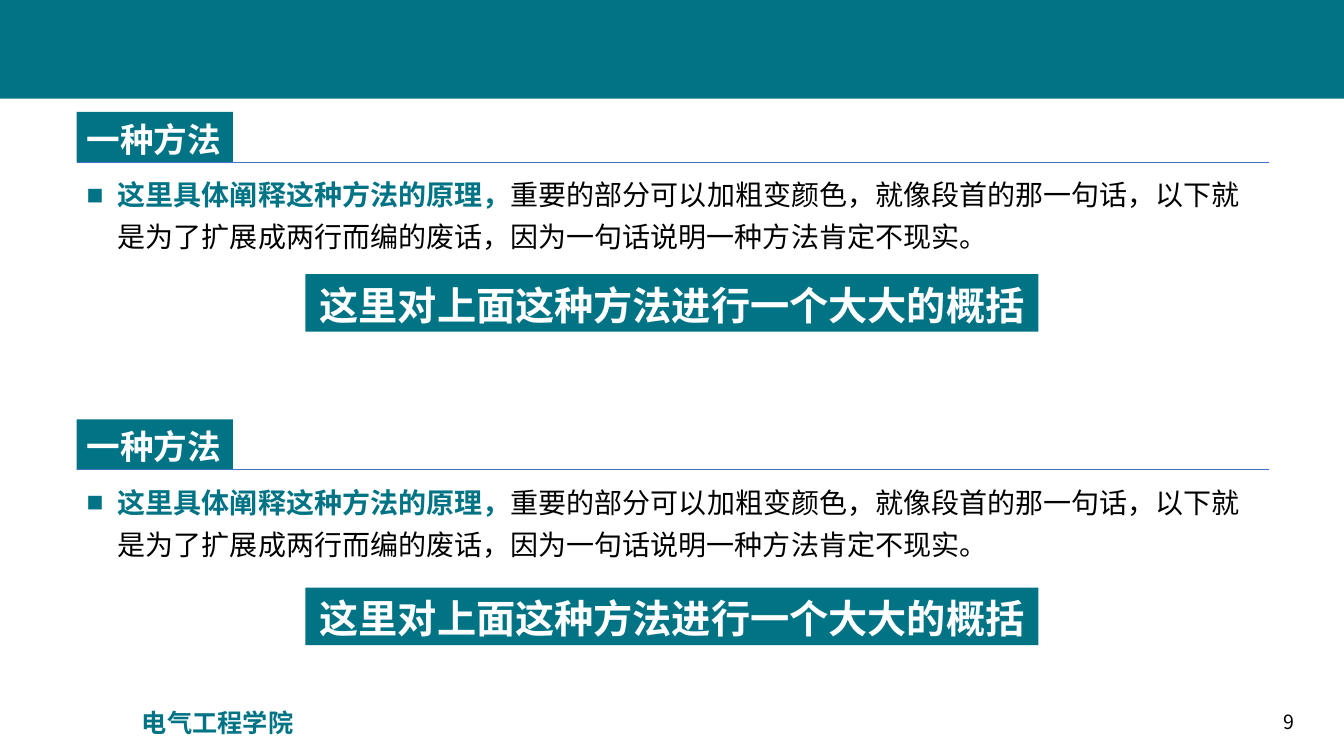
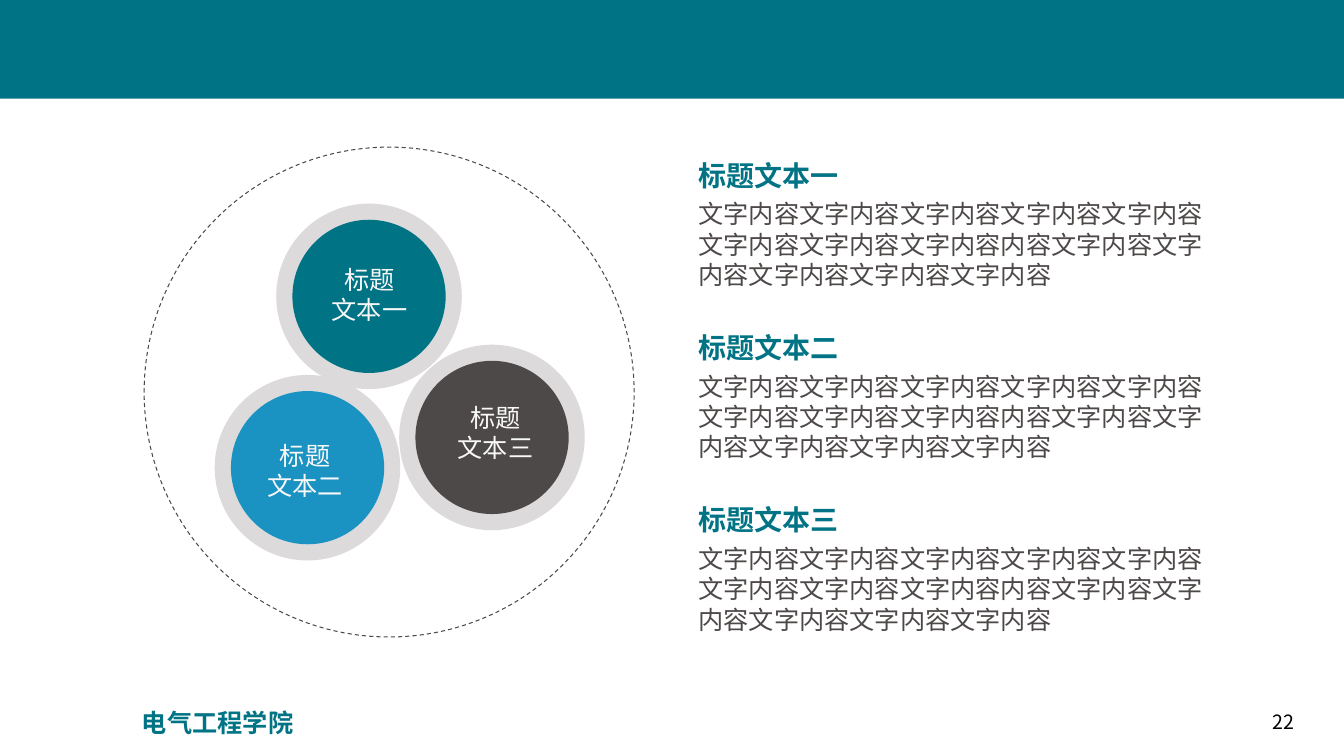
"""Build two teaching slides: method summaries and a three-circle diagram."""
from dataclasses import dataclass

import lxml.etree
import pptx
import pptx.dml.color
import pptx.enum.dml
import pptx.enum.shapes
import pptx.enum.text
import pptx.oxml.ns
import pptx.util

Inches = pptx.util.Inches
Pt = pptx.util.Pt
Align = pptx.enum.text.PP_ALIGN
Anchor = pptx.enum.text.MSO_ANCHOR
Preset = pptx.enum.shapes.MSO_SHAPE
qn = pptx.oxml.ns.qn

FONT = "Noto Sans CJK SC"
COLORS = {
    "teal": "007385",
    "blue": "1A92C2",
    "gray": "4D4948",
    "ring": "DCDADA",
    "rule": "4472C4",
    "white": "FFFFFF",
    "label": "F8F8F8",
    "black": "000000",
}
LEAD = "这里具体阐释这种方法的原理，"
DETAIL = (
    "重要的部分可以加粗变颜色，就像段首的那一句话，以下就是为了扩展成两行而编的废话，"
    "因为一句话说明一种方法肯定不现实。"
)
SUMMARY = "这里对上面这种方法进行一个大大的概括"
FILLER = "文字内容" * 8 + "内容" + "文字内容" * 5


@dataclass
class Box:
    left: float
    top: float
    width: float
    height: float

    def lengths(self) -> tuple:
        return tuple(Inches(v) for v in (self.left, self.top, self.width, self.height))


@dataclass
class Run:
    text: str
    color: str
    bold: bool = False


@dataclass
class Method:
    top: float
    summary_top: float


@dataclass
class Disc:
    center_x: float
    center_y: float
    color: str
    numeral: str
    label_left: float
    label_top: float


METHODS = [Method(1.11, 2.72), Method(4.16, 5.83)]
DISCS = [
    Disc(3.05, 4.64, "blue", "二", 2.52, 4.3),
    Disc(4.88, 4.34, "gray", "三", 4.41, 3.92),
    Disc(3.66, 2.94, "teal", "一", 3.16, 2.55),
]


def rgb(name: str) -> pptx.dml.color.RGBColor:
    return pptx.dml.color.RGBColor.from_string(COLORS[name])


def add_bullet(paragraph) -> None:
    properties = paragraph._p.get_or_add_pPr()
    properties.set("marL", str(Inches(0.31)))
    properties.set("indent", str(-Inches(0.31)))
    lxml.etree.SubElement(properties, qn("a:buFont"), typeface="Arial")
    lxml.etree.SubElement(properties, qn("a:buChar"), char="■")


def write(shape, paragraphs: list[list[Run]], size: float, align=Align.LEFT,
          anchor=Anchor.TOP, wrap: bool = True, spacing: float = 1.2,
          bullet: bool = False) -> None:
    frame = shape.text_frame
    frame.word_wrap = wrap
    frame.vertical_anchor = anchor
    frame.margin_top = Inches(0.07)
    for index, runs in enumerate(paragraphs):
        paragraph = frame.add_paragraph() if index else frame.paragraphs[0]
        if bullet:
            add_bullet(paragraph)
        paragraph.alignment = align
        paragraph.line_spacing = Pt(size * spacing)
        for part in runs:
            run = paragraph.add_run()
            run.text = part.text
            run.font.size = Pt(size)
            run.font.bold = part.bold
            run.font.name = FONT
            run.font.color.rgb = rgb(part.color)
            lxml.etree.SubElement(run._r.get_or_add_rPr(), qn("a:ea"), typeface=FONT)


def add_text(slide, box: Box, text: str, size: float, color: str,
             bold: bool = False, **layout) -> None:
    paragraphs = [[Run(line, color, bold)] for line in text.split("\n")]
    write(slide.shapes.add_textbox(*box.lengths()), paragraphs, size, **layout)


def add_filled(shapes, preset, box: Box, color: str):
    shape = shapes.add_shape(preset, *box.lengths())
    shape.shadow.inherit = False
    shape.fill.solid()
    shape.fill.fore_color.rgb = rgb(color)
    shape.line.fill.background()
    return shape


def add_circle(shapes, center_x: float, center_y: float, diameter: float, color: str):
    box = Box(center_x - diameter / 2, center_y - diameter / 2, diameter, diameter)
    return add_filled(shapes, Preset.OVAL, box, color)


def add_page(deck, number: int):
    slide = deck.slides.add_slide(deck.slide_layouts[6])
    add_filled(slide.shapes, Preset.RECTANGLE, Box(0, 0, 13.33, 0.98), "teal")
    add_text(slide, Box(9.94, 6.95, 3, 0.4), str(number), 14, "black",
             align=Align.RIGHT, anchor=Anchor.MIDDLE)
    add_text(slide, Box(1.31, 6.95, 1.72, 0.4), "电气工程学院", 18, "teal",
             bold=True, wrap=False)
    return slide


def add_method(slide, method: Method) -> None:
    left, rule_top = 0.76, method.top + 0.5
    heading = slide.shapes.add_group_shape().shapes
    tab = add_filled(heading, Preset.RECTANGLE, Box(left, method.top, 1.55, 0.5), "teal")
    write(tab, [[Run("一种方法", "white", True)]], 24, wrap=False)
    rule = heading.add_connector(
        pptx.enum.shapes.MSO_CONNECTOR.STRAIGHT,
        Inches(left), Inches(rule_top), Inches(12.59), Inches(rule_top))
    rule.line.color.rgb = rgb("rule")
    rule.line.width = Pt(0.5)
    lxml.etree.SubElement(rule._element.spPr, qn("a:effectLst"))

    principle = slide.shapes.add_textbox(*Box(left, rule_top, 11.81, 0.9).lengths())
    write(principle, [[Run(LEAD, "teal", True), Run(DETAIL, "black")]], 20,
          spacing=1.5, bullet=True)
    summary = add_filled(slide.shapes, Preset.RECTANGLE,
                         Box(3.03, method.summary_top, 7.27, 0.57), "teal")
    write(summary, [[Run(SUMMARY, "white", True)]], 28, align=Align.CENTER, wrap=False)


def add_diagram(slide) -> None:
    orbit = add_circle(slide.shapes, 3.86, 3.89, 4.86, "white")
    orbit.fill.background()
    orbit.line.color.rgb = rgb("gray")
    orbit.line.width = Pt(0.75)
    orbit.line.dash_style = pptx.enum.dml.MSO_LINE.DASH
    for disc in DISCS:
        add_circle(slide.shapes, disc.center_x, disc.center_y, 1.84, "ring")
        add_circle(slide.shapes, disc.center_x, disc.center_y, 1.52, disc.color)
    for disc in DISCS:
        add_text(slide, Box(disc.label_left, disc.label_top, 1.01, 0.71),
                 f"标题\n文本{disc.numeral}", 18, "label", align=Align.CENTER)


def add_topics(slide) -> None:
    for index, numeral in enumerate("一二三"):
        top = 1.5 + 1.71 * index
        add_text(slide, Box(6.83, top, 1.6, 0.44), f"标题文本{numeral}", 20, "teal",
                 bold=True, wrap=False)
        add_text(slide, Box(6.83, top + 0.4, 5.36, 1.31), FILLER, 18, "gray")


def main() -> None:
    deck = pptx.Presentation()
    deck.slide_width, deck.slide_height = Inches(13.33), Inches(7.5)
    methods_page = add_page(deck, 9)
    for method in METHODS:
        add_method(methods_page, method)
    circles_page = add_page(deck, 22)
    add_diagram(circles_page)
    add_topics(circles_page)
    deck.save("out.pptx")


if __name__ == "__main__":
    main()
